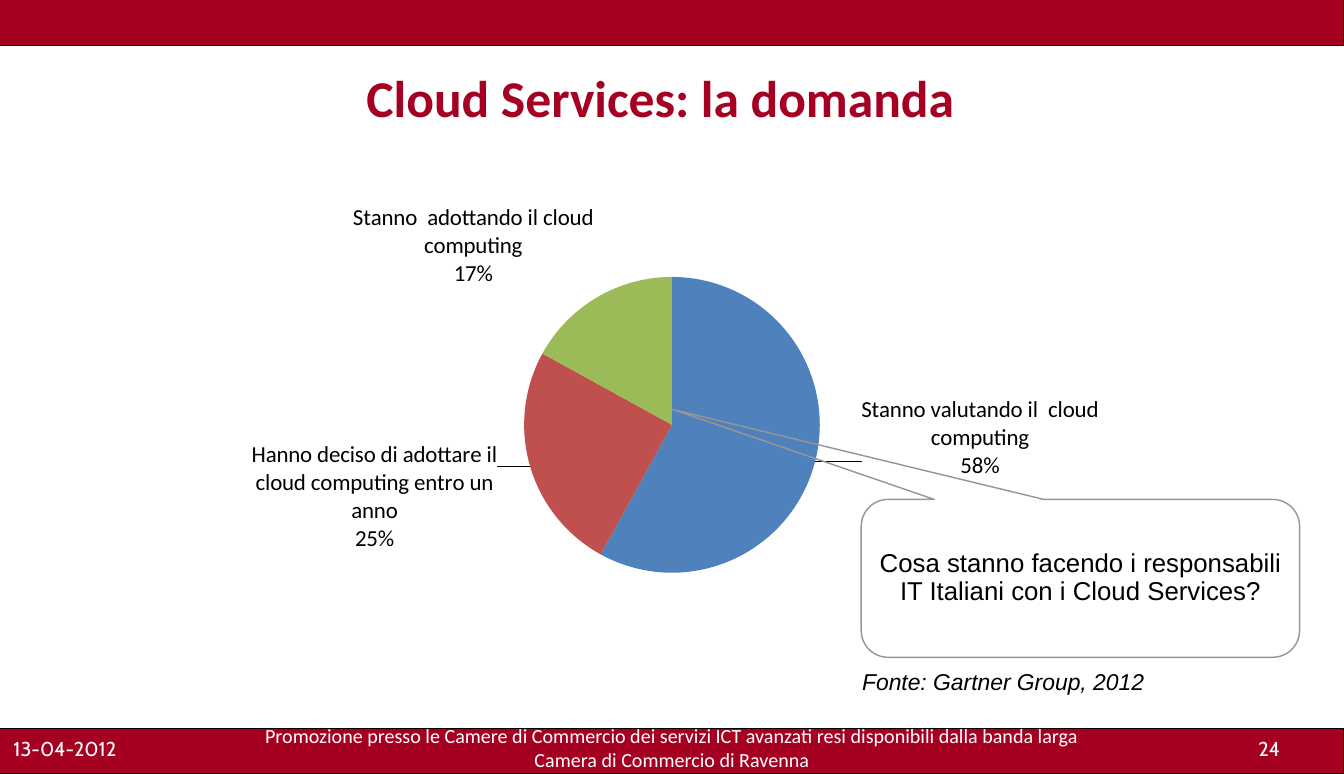
from dataclasses import dataclass

from pptx import Presentation
from pptx.chart.data import CategoryChartData
from pptx.dml.color import RGBColor
from pptx.enum.chart import XL_CHART_TYPE, XL_LABEL_POSITION
from pptx.enum.shapes import MSO_SHAPE
from pptx.enum.text import MSO_ANCHOR, PP_ALIGN
from pptx.oxml import parse_xml
from pptx.oxml.ns import nsdecls
from pptx.util import Inches, Pt

CRIMSON = RGBColor(0xA5, 0x00, 0x21)
WHITE = RGBColor(0xFF, 0xFF, 0xFF)
BLACK = RGBColor(0x00, 0x00, 0x00)
GREY = RGBColor(0x96, 0x96, 0x96)
BLUE = RGBColor(0x4F, 0x81, 0xBD)
RED = RGBColor(0xC0, 0x50, 0x4D)
GREEN = RGBColor(0x9B, 0xBB, 0x59)

LEFT, CENTER = PP_ALIGN.LEFT, PP_ALIGN.CENTER
TOP, MIDDLE = MSO_ANCHOR.TOP, MSO_ANCHOR.MIDDLE
RECTANGLE = MSO_SHAPE.RECTANGLE
CALLOUT = MSO_SHAPE.ROUNDED_RECTANGULAR_CALLOUT
PIE = XL_CHART_TYPE.PIE
OUTSIDE_END = XL_LABEL_POSITION.OUTSIDE_END

SLIDE_WIDTH, SLIDE_HEIGHT = Inches(13.03), Inches(7.5)


@dataclass(frozen=True)
class Area:
    """Place and size in percent of the slide."""
    left: float
    top: float
    width: float
    height: float

    def emu(self) -> tuple[int, int, int, int]:
        return (int(SLIDE_WIDTH * self.left / 100), int(SLIDE_HEIGHT * self.top / 100),
                int(SLIDE_WIDTH * self.width / 100), int(SLIDE_HEIGHT * self.height / 100))


@dataclass(frozen=True)
class Style:
    size: float
    font: str
    color: RGBColor
    bold: bool = False
    italic: bool = False
    align: PP_ALIGN = LEFT


@dataclass(frozen=True)
class Caption:
    text: str
    area: Area
    style: Style
    anchor: MSO_ANCHOR = TOP
    padded: bool = True
    wrap: bool = True


@dataclass(frozen=True)
class Slice:
    label: str
    share: int
    color: RGBColor
    shift_x: float
    shift_y: float


BAR_HEIGHT = 5.87
BARS = [Area(0, top, 100, BAR_HEIGHT) for top in (0, 100 - BAR_HEIGHT)]

PAGE_STYLE = Style(14, "Cabin", WHITE)
CAPTIONS = [
    Caption("Promozione presso le Camere di Commercio dei servizi ICT avanzati resi "
            "disponibili dalla banda larga\nCamera di Commercio di Ravenna",
            Area(15, 93.5, 70, 6.4), Style(14, "Calibri", WHITE, align=CENTER), padded=False),
    Caption("13-04-2012", Area(1, 95.2, 9.1, 3.2), PAGE_STYLE, padded=False, wrap=False),
    Caption("24", Area(93.63, 95.2, 5, 3.2), PAGE_STYLE, padded=False, wrap=False),
    Caption("Cloud Services: la domanda", Area(3.45, 6, 91.4, 12.93),
            Style(36, "Calibri", CRIMSON, bold=True, align=CENTER), MIDDLE),
    Caption("Fonte: Gartner Group, 2012", Area(63.39, 85.6, 23.64, 4.93),
            Style(16, "Arial", BLACK, italic=True)),
]

CHART_AREA = Area(0, 23.87, 100, 58)
PIE_AREA = Area(0.39, 0.2, 0.22, 0.67)  # shares of the chart
LABEL_STYLE = Style(16, "Calibri", BLACK, align=CENTER)
SLICES = [
    Slice("Stanno valutando il  cloud computing", 58, BLUE, 0.03, -0.15),
    Slice("Hanno deciso di adottare il cloud computing entro un anno", 25, RED, -0.02, -0.06),
    Slice("Stanno  adottando il cloud computing", 17, GREEN, 0, -0.01),
]

QUESTION = "Cosa stanno facendo i responsabili IT Italiani con i Cloud Services?"
QUESTION_AREA = Area(64.08, 64.53, 32.62, 20.4)
QUESTION_STYLE = Style(18, "Arial", BLACK, align=CENTER)
QUESTION_POINTER = (-0.93, -1.07, 0.17)


def write(frame, text: str, style: Style) -> None:
    frame.text = text
    for paragraph in frame.paragraphs:
        paragraph.alignment = style.align
        for run in paragraph.runs:
            set_font(run.font, style)


def set_font(font, style: Style) -> None:
    font.size, font.name = Pt(style.size), style.font
    font.bold, font.italic = style.bold, style.italic
    font.color.rgb = style.color


def add_bar(slide, area: Area) -> None:
    bar = slide.shapes.add_shape(RECTANGLE, *area.emu())
    bar.shadow.inherit = False
    bar.fill.solid()
    bar.fill.fore_color.rgb = CRIMSON
    bar.line.color.rgb = BLACK
    bar.line.width = Pt(0.75)


def add_caption(slide, caption: Caption) -> None:
    frame = slide.shapes.add_textbox(*caption.area.emu()).text_frame
    frame.word_wrap = caption.wrap
    frame.vertical_anchor = caption.anchor
    if not caption.padded:
        frame.margin_left = frame.margin_right = 0
        frame.margin_top = frame.margin_bottom = 0
    write(frame, caption.text, caption.style)


def manual_layout(content: str):
    return parse_xml(f'<c:layout {nsdecls("c")}><c:manualLayout>{content}</c:manualLayout></c:layout>')


def add_demand_pie(slide) -> None:
    data = CategoryChartData()
    data.categories = [part.label for part in SLICES]
    data.add_series("Series 1", [part.share for part in SLICES])
    chart = slide.shapes.add_chart(PIE, *CHART_AREA.emu(), data).chart
    chart.has_legend = chart.has_title = False
    set_font(chart.font, LABEL_STYLE)
    demand = chart.plots[0].series[0]

    # Slice colours and labels
    for index, part in enumerate(SLICES):
        point = demand.points[index]
        point.format.fill.solid()
        point.format.fill.fore_color.rgb = part.color
        write(point.data_label.text_frame, f"{part.label}\n{part.share}%", LABEL_STYLE)
        point.data_label.position = OUTSIDE_END

    # Label offsets
    for part, label in zip(SLICES, demand._element.xpath(".//c:dLbl")):
        for old in label.xpath("c:layout"):
            label.remove(old)
        label.xpath("c:idx")[0].addnext(
            manual_layout(f'<c:x val="{part.shift_x}"/><c:y val="{part.shift_y}"/>'))

    # Size and place of the pie
    plot_area = chart._chartSpace.xpath("c:chart/c:plotArea")[0]
    for old in plot_area.xpath("c:layout"):
        plot_area.remove(old)
    plot_area.insert(0, manual_layout(
        '<c:layoutTarget val="inner"/><c:xMode val="edge"/><c:yMode val="edge"/>'
        f'<c:x val="{PIE_AREA.left}"/><c:y val="{PIE_AREA.top}"/>'
        f'<c:w val="{PIE_AREA.width}"/><c:h val="{PIE_AREA.height}"/>'))


def add_question(slide) -> None:
    callout = slide.shapes.add_shape(CALLOUT, *QUESTION_AREA.emu())
    callout.shadow.inherit = False
    callout.fill.background()
    callout.line.color.rgb = GREY
    callout.line.width = Pt(1)
    for index, value in enumerate(QUESTION_POINTER):
        callout.adjustments[index] = value
    frame = callout.text_frame
    frame.word_wrap = True
    frame.vertical_anchor = MIDDLE
    write(frame, QUESTION, QUESTION_STYLE)
    frame.paragraphs[0].line_spacing = 0.9


def main() -> None:
    deck = Presentation()
    deck.slide_width, deck.slide_height = SLIDE_WIDTH, SLIDE_HEIGHT
    slide = deck.slides.add_slide(deck.slide_layouts[6])
    for bar in BARS:
        add_bar(slide, bar)
    for caption in CAPTIONS:
        add_caption(slide, caption)
    add_demand_pie(slide)
    add_question(slide)
    deck.save("out.pptx")


if __name__ == "__main__":
    main()
